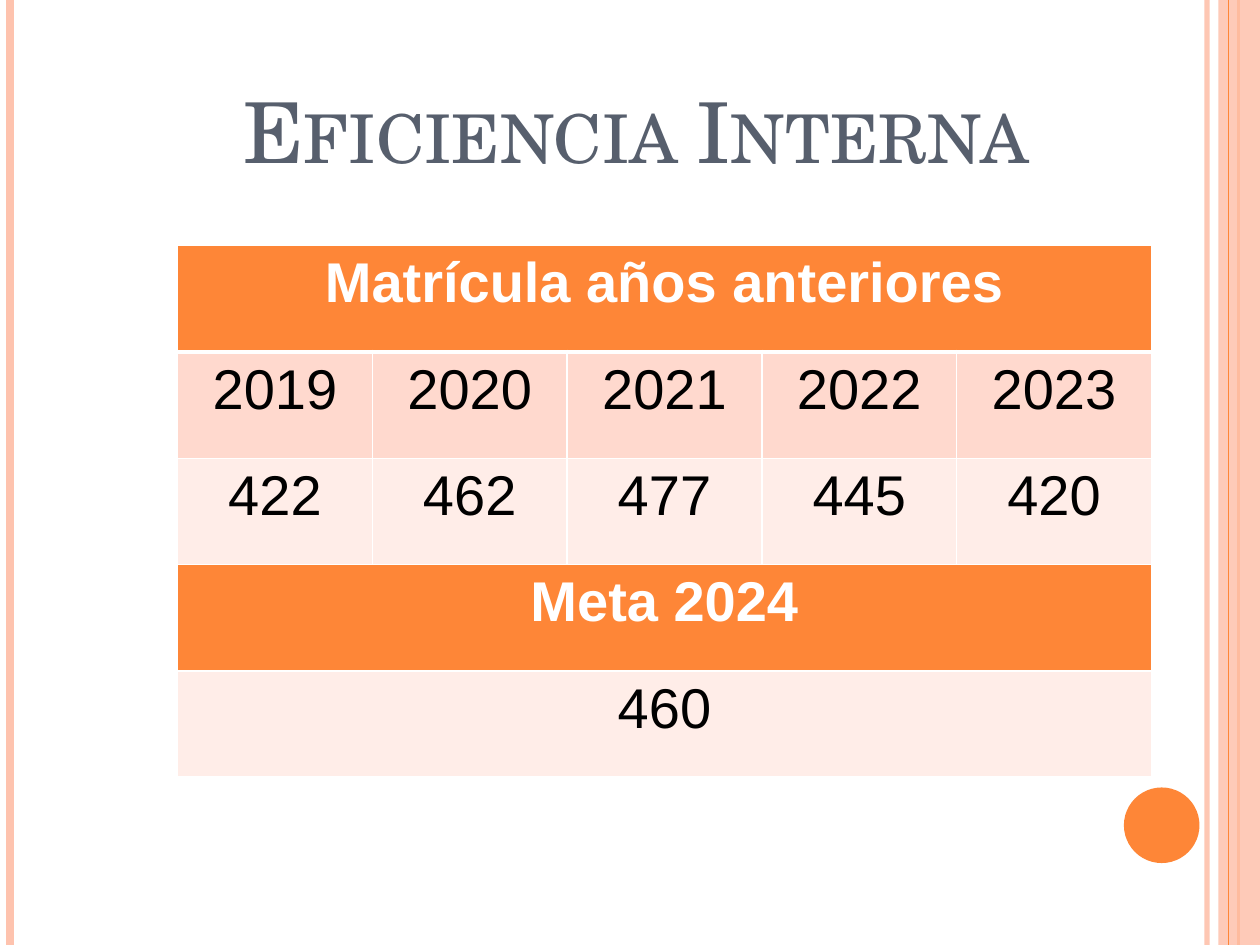
from dataclasses import dataclass

from lxml.etree import SubElement
from pptx import Presentation
from pptx.dml.color import RGBColor
from pptx.enum.shapes import MSO_CONNECTOR, MSO_SHAPE
from pptx.enum.text import MSO_ANCHOR, PP_ALIGN
from pptx.oxml import parse_xml
from pptx.oxml.ns import nsdecls, qn
from pptx.util import Inches, Pt


@dataclass(frozen=True)
class Theme:
    """Colours, fonts and type sizes of the slide."""
    accent: str = "FE8637"
    pale: str = "FEC3AE"
    title: str = "575F6D"
    light: str = "FFFFFF"
    dark: str = "000000"
    year_band: str = "FFD9CE"
    value_band: str = "FFEDE8"
    title_font: str = "TeX Gyre Schola"
    body_font: str = "Arial"
    title_size: int = 48
    body_size: int = 32


THEME = Theme()


def write_text(text_frame, text, *, font, size, color, bold=False, small_caps=False):
    """Write one centred paragraph with the given format."""
    paragraph = text_frame.paragraphs[0]
    paragraph.alignment = PP_ALIGN.CENTER
    run = paragraph.add_run()
    run.text = text
    run.font.name = font
    run.font.size = Pt(size)
    run.font.bold = bold
    run.font.color.rgb = RGBColor.from_string(color)
    if small_caps:
        run.font._element.set("cap", "small")


def set_opacity(fill_parent, percent):
    """Set the opacity of the solid colour under an element."""
    color = fill_parent.find(".//" + qn("a:srgbClr"))
    SubElement(color, qn("a:alpha")).set("val", str(percent * 1000))


def add_rule(slide, x, top, height, color, width, opacity=100):
    """Draw a vertical line."""
    rule = slide.shapes.add_connector(
        MSO_CONNECTOR.STRAIGHT, Inches(x), Inches(top), Inches(x), Inches(top + height))
    rule.line.color.rgb = RGBColor.from_string(color)
    rule.line.width = Pt(width)
    properties = rule._element.spPr
    if opacity < 100:
        set_opacity(properties, opacity)
    SubElement(properties, qn("a:effectLst"))


def add_solid(slide, kind, box, color, opacity=100):
    """Draw a filled shape without outline."""
    shape = slide.shapes.add_shape(kind, *map(Inches, box))
    shape.shadow.inherit = False
    shape.fill.solid()
    shape.fill.fore_color.rgb = RGBColor.from_string(color)
    shape.line.fill.background()
    if opacity < 100:
        set_opacity(shape._element.spPr, opacity)


def add_frame(slide, box):
    """Draw the side stripes and the disc relative to the slide box."""
    left, top, width, height = box
    right = left + width
    add_rule(slide, right - 0.42, top, height, THEME.pale, 3, opacity=93)
    add_rule(slide, left + 0.08, top, height, THEME.pale, 4.5)
    add_rule(slide, right - 0.17, top, height, THEME.accent, 1.5)
    add_solid(slide, MSO_SHAPE.RECTANGLE, (right - 0.33, top, 0.33, height), THEME.pale, 87)
    add_rule(slide, right - 0.25, top, height, THEME.accent, 0.75)
    add_solid(slide, MSO_SHAPE.OVAL, (right - 1.08, top + height - 1.25, 0.6, 0.6), THEME.accent)


def add_title(slide, box, text):
    """Place and format the title placeholder."""
    title = slide.shapes.title
    title.left, title.top, title.width, title.height = map(Inches, box)
    title.text_frame.vertical_anchor = MSO_ANCHOR.BOTTOM
    write_text(title.text_frame, text, font=THEME.title_font, size=THEME.title_size,
               color=THEME.title, small_caps=True)


def set_borders(cell, widths):
    """Give a cell light borders with widths in points by side."""
    properties = cell._tc.get_or_add_tcPr()
    for position, (side, width) in enumerate(widths.items()):
        properties.insert(position, parse_xml(
            f'<a:ln{side} {nsdecls("a")} w="{Pt(width)}"><a:solidFill>'
            f'<a:srgbClr val="{THEME.light}"/></a:solidFill></a:ln{side}>'))


def add_enrolment_table(slide, box, rows):
    """Build the table; a row with a single text spans all columns."""
    left, top, width, height = box
    column_count = max(len(texts) for texts, _ in rows)
    table = slide.shapes.add_table(len(rows), column_count, *map(Inches, box)).table
    for column in table.columns:
        column.width = Inches(width / column_count)
    for row_index, (texts, band) in enumerate(rows):
        table.rows[row_index].height = Inches(height / len(rows))
        heading = band == THEME.accent
        for column_index in range(column_count):
            cell = table.cell(row_index, column_index)
            set_borders(cell, {"L": 1, "R": 1, "T": 3 if row_index == 1 else 1,
                               "B": 3 if row_index == 0 else 1})
            cell.fill.solid()
            cell.fill.fore_color.rgb = RGBColor.from_string(band)
        if len(texts) == 1:
            table.cell(row_index, 0).merge(table.cell(row_index, column_count - 1))
        for column_index, text in enumerate(texts):
            write_text(table.cell(row_index, column_index).text_frame, text,
                       font=THEME.body_font, size=THEME.body_size, bold=heading,
                       color=THEME.light if heading else THEME.dark)


def main():
    """Build and save the slide."""
    presentation = Presentation()
    presentation.slide_width, presentation.slide_height = Inches(10), Inches(7.5)
    slide = presentation.slides.add_slide(presentation.slide_layouts[5])
    add_frame(slide, (0, 0, 10, 7.5))
    add_title(slide, (0.55, 0.23, 9, 1.25), "Eficiencia Interna")
    add_enrolment_table(slide, (1.41, 1.95, 7.73, 4.22), [
        (["Matrícula años anteriores"], THEME.accent),
        (["2019", "2020", "2021", "2022", "2023"], THEME.year_band),
        (["422", "462", "477", "445", "420"], THEME.value_band),
        (["Meta 2024"], THEME.accent),
        (["460"], THEME.value_band),
    ])
    presentation.save("out.pptx")


if __name__ == "__main__":
    main()
